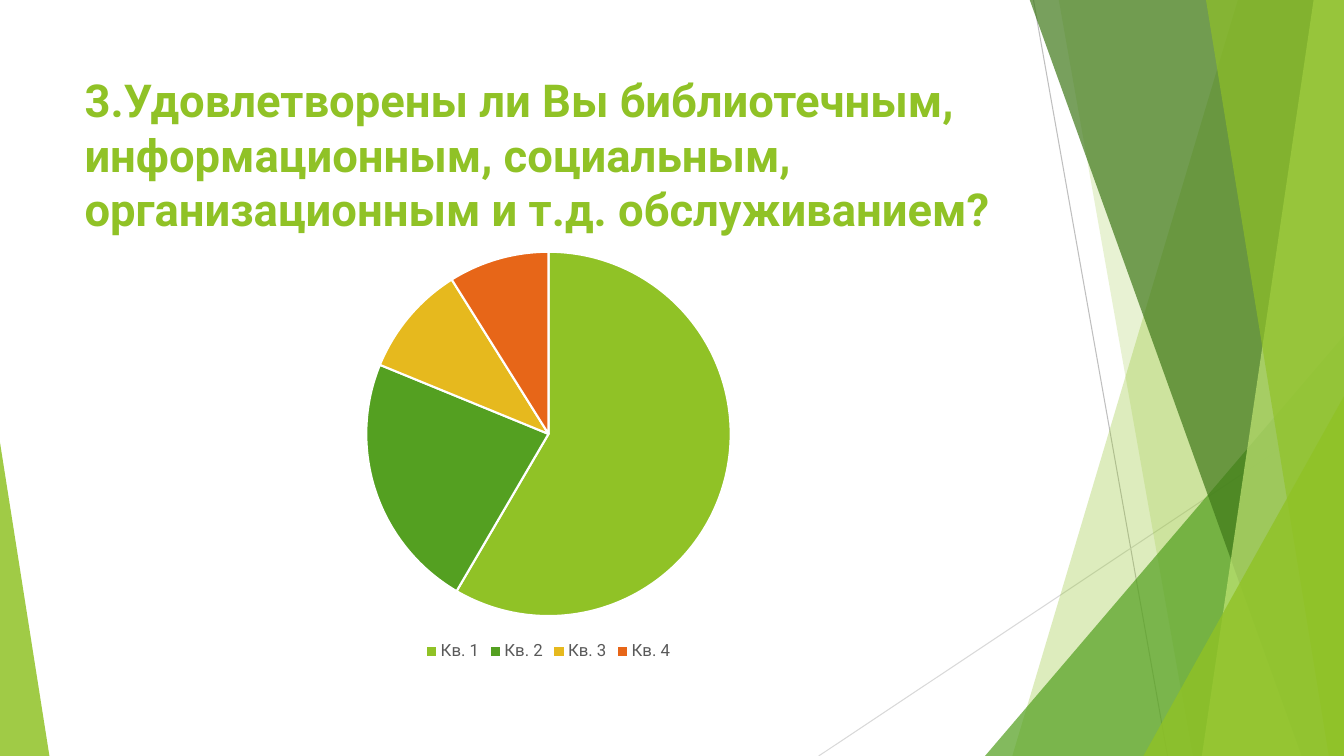
from lxml import etree
from pptx import Presentation
from pptx.chart.data import CategoryChartData
from pptx.dml.color import RGBColor
from pptx.enum.chart import XL_CHART_TYPE, XL_LEGEND_POSITION
from pptx.enum.shapes import MSO_CONNECTOR, MSO_SHAPE
from pptx.enum.text import MSO_ANCHOR
from pptx.oxml.ns import qn
from pptx.util import Pt

PIE = XL_CHART_TYPE.PIE
BOTTOM = XL_LEGEND_POSITION.BOTTOM
STRAIGHT = MSO_CONNECTOR.STRAIGHT
TRIANGLE = MSO_SHAPE.ISOSCELES_TRIANGLE
TOP = MSO_ANCHOR.TOP

PX = 9144  # 100 px to the inch
WIDTH, HEIGHT = 1333, 750
FONT = "Roboto"
LIME, GREEN = "90C226", "54A021"


def rgb(color):
    return RGBColor.from_string(color)


def paint(facet, color, opacity):
    facet.shadow.inherit = False
    facet.line.fill.background()
    facet.fill.solid()
    facet.fill.fore_color.rgb = rgb(color)
    tint = facet.fill._xPr.find(qn("a:solidFill"))[0]
    etree.SubElement(tint, qn("a:alpha")).set("val", str(opacity * 1000))


prs = Presentation()
prs.slide_width, prs.slide_height = WIDTH * PX, HEIGHT * PX
slide = prs.slides.add_slide(prs.slide_layouts[6])
shapes = slide.shapes

# Thin rays behind the facets
for x1, y1, x2, y2, color in [
    (1025, 0, 1158, HEIGHT, "BFBFBF"),
    (WIDTH, 403, 812, HEIGHT, "D9D9D9"),
]:
    ray = shapes.add_connector(STRAIGHT, x1 * PX, y1 * PX, x2 * PX, y2 * PX)
    ray.line.color.rgb = rgb(color)
    ray.line.width = Pt(0.75)
    etree.SubElement(ray._element.spPr, qn("a:effectLst"))

# Facets: bands have a top and bottom x and reach the right edge,
# corner triangles have left, top, width, height and apex
for kind, geometry, color, opacity in [
    ("band", (1228, 1004), LIME, 30),
    ("band", (1050, 1183), LIME, 20),
    ("corner", (977, 333, 356, 417, 1), GREEN, 72),
    ("band", (1021, 1291), "3F7819", 70),
    ("band", (1303, 1192), "C0E474", 70),
    ("band", (1196, 1318), LIME, 65),
    ("corner", (1134, 393, 199, 357, 1), LIME, 80),
    ("corner", (0, 439, 49, 311, 0), LIME, 85),
]:
    if kind == "band":
        top_x, bottom_x = geometry
        outline = shapes.build_freeform(top_x, -1, scale=PX)
        outline.add_line_segments([(WIDTH, -1), (WIDTH, HEIGHT), (bottom_x, HEIGHT)])
        facet = outline.convert_to_shape()
    else:
        *box, apex = geometry
        facet = shapes.add_shape(TRIANGLE, *[length * PX for length in box])
        facet.adjustments[0] = apex
    paint(facet, color, opacity)

# Question
question = shapes.add_textbox(74 * PX, 67 * PX, 940 * PX, 144 * PX).text_frame
question.word_wrap = True
question.vertical_anchor = TOP
run = question.paragraphs[0].add_run()
run.text = ("3.Удовлетворены ли Вы библиотечным, информационным, социальным, "
            "организационным и т.д. обслуживанием?")
run.font.name = FONT
run.font.size = Pt(32.4)
run.font.bold = True
run.font.color.rgb = rgb(LIME)

# Answers
answers = CategoryChartData()
answers.categories = ["Кв. 1", "Кв. 2", "Кв. 3", "Кв. 4"]
answers.add_series("Series 1", [59, 23, 10, 9])
chart = shapes.add_chart(PIE, 74 * PX, 236 * PX, 940 * PX, 424 * PX, answers).chart
chart.has_title = False
chart.font.name = FONT
chart.font.size = Pt(10)
chart.has_legend = True
chart.legend.position = BOTTOM
chart.legend.include_in_layout = False
chart.legend.font.name = FONT
chart.legend.font.size = Pt(12)
chart.legend.font.color.rgb = rgb("595959")

pie = chart.plots[0]
pie.vary_by_categories = True
for index, color in enumerate([LIME, GREEN, "E6B91E", "E76618"]):
    slice_format = pie.series[0].points[index].format
    slice_format.fill.solid()
    slice_format.fill.fore_color.rgb = rgb(color)
    slice_format.line.color.rgb = rgb("FFFFFF")
    slice_format.line.width = Pt(1.5)

prs.save("out.pptx")
